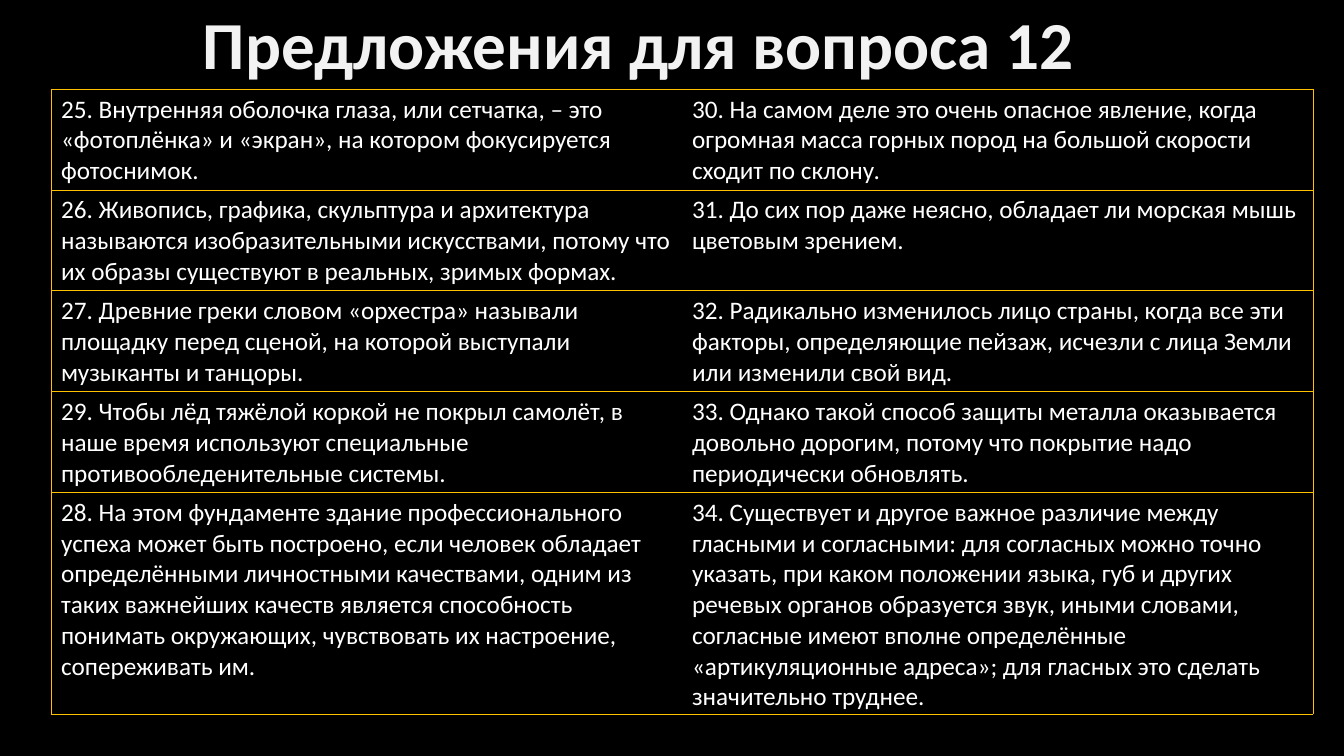
from lxml.etree import SubElement
from pptx import Presentation
from pptx.dml.color import RGBColor
from pptx.enum.text import MSO_ANCHOR
from pptx.oxml.ns import qn
from pptx.util import Pt

PX = 914400 / 100.8
GOLD = "FFC000"
SENTENCES = [
    ("25. Внутренняя оболочка глаза, или сетчатка, – это «фотоплёнка» и «экран», на котором фокусируется фотоснимок.",
     "30. На самом деле это очень опасное явление, когда огромная масса горных пород на большой скорости сходит по склону."),
    ("26. Живопись, графика, скульптура и архитектура называются изобразительными искусствами, потому что их образы существуют в реальных, зримых формах.",
     "31. До сих пор даже неясно, обладает ли морская мышь цветовым зрением."),
    ("27. Древние греки словом «орхестра» называли площадку перед сценой, на которой выступали музыканты и танцоры.",
     "32. Радикально изменилось лицо страны, когда все эти факторы, определяющие пейзаж, исчезли с лица Земли или изменили свой вид."),
    ("29. Чтобы лёд тяжёлой коркой не покрыл самолёт, в наше время используют специальные противообледенительные системы.",
     "33. Однако такой способ защиты металла оказывается довольно дорогим, потому что покрытие надо периодически обновлять."),
    ("28. На этом фундаменте здание профессионального успеха может быть построено, если человек обладает определёнными личностными качествами, одним из таких важнейших качеств является способность понимать окружающих, чувствовать их настроение, сопереживать им.",
     "34. Существует и другое важное различие между гласными и согласными: для согласных можно точно указать, при каком положении языка, губ и других речевых органов образуется звук, иными словами, согласные имеют вполне определённые «артикуляционные адреса»; для гласных это сделать значительно труднее."),
]


def px(*lengths):
    return [round(length * PX) for length in lengths]


def write(frame, text, size=18, color="FFFFFF", bold=False, spacing=None):
    frame.word_wrap = True
    para = frame.paragraphs[0]
    para.line_spacing = spacing
    span = para.add_run()
    span.text = text
    span.font.name = "Calibri"
    span.font.size = Pt(size)
    span.font.bold = bold
    span.font.color.rgb = RGBColor.from_string(color)


deck = Presentation()
deck.slide_width, deck.slide_height = px(1344, 756)
page = deck.slides.add_slide(deck.slide_layouts[6])
page.background.fill.solid()
page.background.fill.fore_color.rgb = RGBColor.from_string("000000")

title = page.shapes.add_textbox(*px(193, -26, 1181, 115))
title.text_frame.vertical_anchor = MSO_ANCHOR.BOTTOM
write(title.text_frame, "Предложения для вопроса 12", size=48, color="F2F2F2", bold=True, spacing=0.9)

table = page.shapes.add_table(len(SENTENCES), 2, *px(51, 89, 1262, 625)).table
table.first_row = False
table.horz_banding = False
for row, pair in enumerate(SENTENCES):
    table.rows[row].height = px(74)[0]
    for column, sentence in enumerate(pair):
        cell = table.cell(row, column)
        write(cell.text_frame, sentence)
        properties = cell._tc.get_or_add_tcPr()
        inner_side = "lnR" if column == 0 else "lnL"
        for side in ("lnL", "lnR", "lnT", "lnB"):
            border = SubElement(properties, qn(f"a:{side}"), w=str(Pt(0.5)))
            if side == inner_side:
                SubElement(border, qn("a:noFill"))
            else:
                fill = SubElement(border, qn("a:solidFill"))
                SubElement(fill, qn("a:srgbClr"), val=GOLD)
        cell.fill.background()

deck.save("out.pptx")
